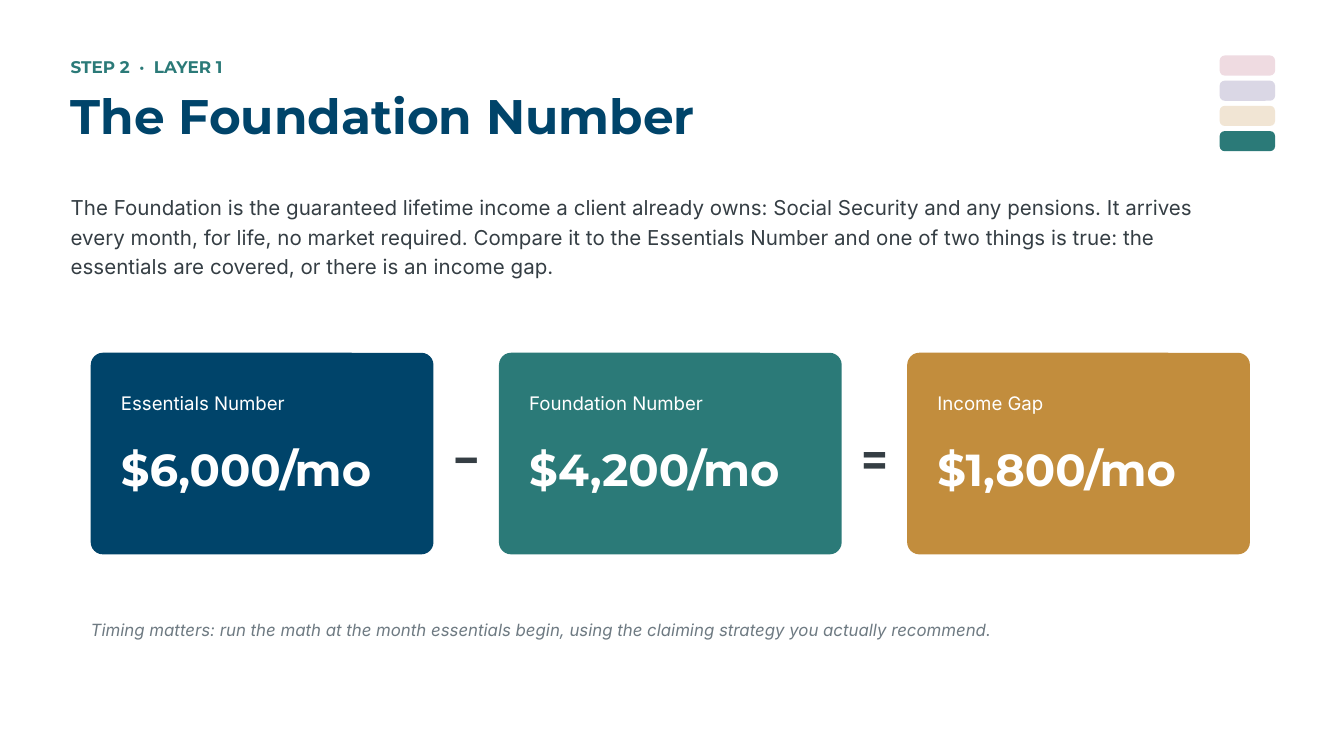
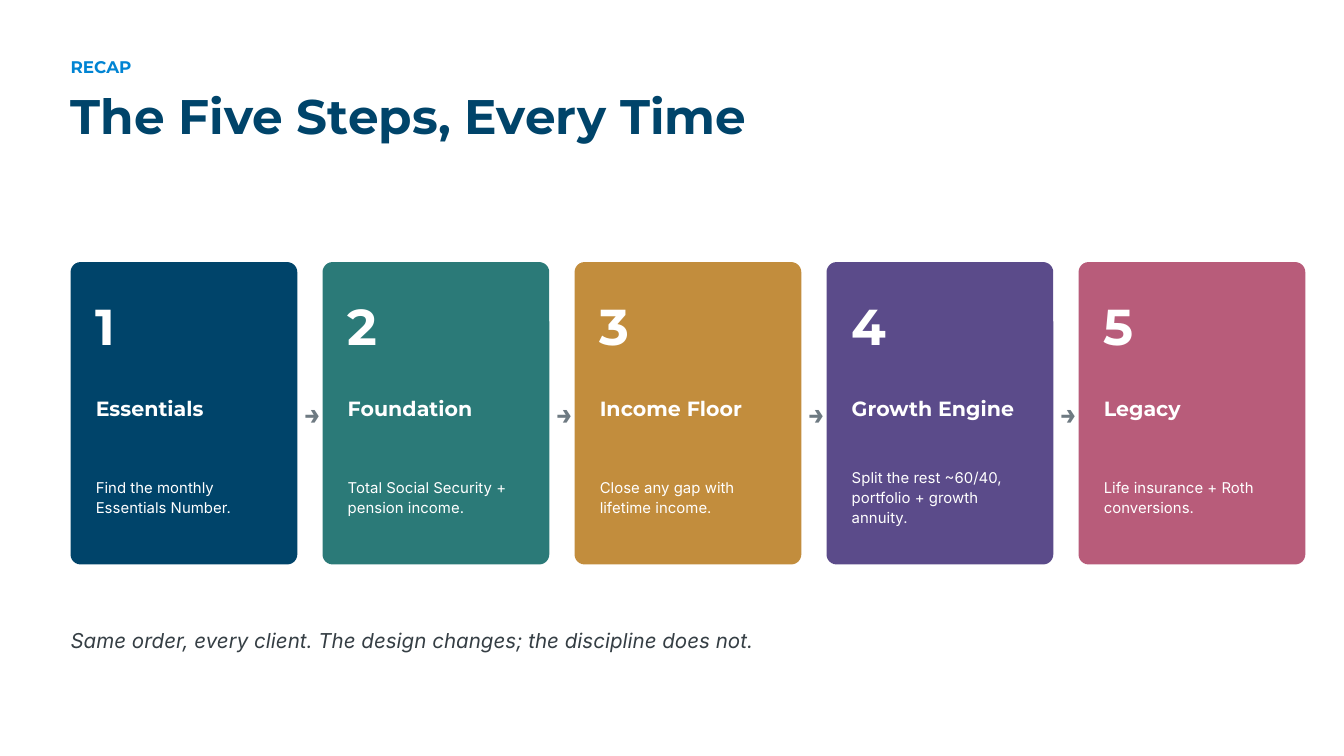
from lxml import etree
from pptx import Presentation
from pptx.dml.color import RGBColor
from pptx.enum.shapes import MSO_SHAPE
from pptx.enum.text import MSO_ANCHOR, PP_ALIGN
from pptx.oxml.ns import qn
from pptx.util import Emu, Inches, Pt

ROUNDED = MSO_SHAPE.ROUNDED_RECTANGLE
MIDDLE = MSO_ANCHOR.MIDDLE
LEFT, CENTER = PP_ALIGN.LEFT, PP_ALIGN.CENTER

PX = 6858  # EMU per px: 750 px make the slide height
HEADING, BODY = "Montserrat", "Inter"
MARGIN = 70

COLORS = {
    "navy": "00446A",
    "teal": "2B7A78",
    "gold": "C28D3D",
    "purple": "5B4B8A",
    "rose": "B85C7A",
    "blue": "0084D3",
    "ink": "353E44",
    "gray": "6E7A82",
    "white": "FFFFFF",
}


class Deck:
    """Holds the shared style and the slide being filled."""

    def __init__(self):
        self.presentation = Presentation()
        self.presentation.slide_width = Inches(10)
        self.presentation.slide_height = Emu(750 * PX)
        self.slide = None

    def color(self, name):
        return RGBColor.from_string(COLORS[name])

    def box(self, left, top, width, height):
        return [Emu(length * PX) for length in (left, top, width, height)]

    def new_slide(self, kicker, title, kicker_color):
        self.slide = self.presentation.slides.add_slide(self.presentation.slide_layouts[6])
        fill = self.slide.background.fill
        fill.solid()
        fill.fore_color.rgb = self.color("white")
        self.text(kicker, MARGIN, 50, 700, 32, 9, kicker_color, HEADING, bold=True)
        self.text(title, MARGIN, 72, 960, 85, 26, "navy", HEADING, bold=True)

    def text(self, words, left, top, width, height, size, color, font=BODY,
             bold=False, italic=False, align=LEFT, spacing=None):
        shape = self.slide.shapes.add_textbox(*self.box(left, top, width, height))
        frame = shape.text_frame
        frame.word_wrap = True
        frame.vertical_anchor = MIDDLE
        frame.margin_left = frame.margin_right = 0
        frame.margin_top = frame.margin_bottom = 0
        paragraph = frame.paragraphs[0]
        paragraph.text = words
        paragraph.alignment = align
        if spacing:
            paragraph.line_spacing = spacing
        paragraph.font.name = font
        paragraph.font.size = Pt(size)
        paragraph.font.bold = bold
        paragraph.font.italic = italic
        paragraph.font.color.rgb = self.color(color)

    def card(self, left, top, width, height, color, radius, opacity=100):
        shape = self.slide.shapes.add_shape(ROUNDED, *self.box(left, top, width, height))
        shape.adjustments[0] = radius / min(width, height)
        shape.shadow.inherit = False
        shape.line.fill.background()
        shape.fill.solid()
        shape.fill.fore_color.rgb = self.color(color)
        if opacity < 100:
            fill_color = next(shape.element.spPr.iter(qn("a:srgbClr")))
            etree.SubElement(fill_color, qn("a:alpha"), val=str(opacity * 1000))

    def layer_stack(self, layers, active):
        """Small stack of layers, bottom first, with one highlighted."""
        for index, color in enumerate(layers):
            self.card(1210, 130 - 25 * index, 55, 20, color, 5,
                      100 if color == active else 22)

    def amount_card(self, left, color, label, amount):
        self.card(left, 350, 340, 200, color, 12)
        self.text(label, left + 30, 380, 290, 40, 10, "white")
        self.text(amount, left + 30, 425, 290, 80, 24, "white", HEADING, bold=True)

    def step_card(self, left, color, number, name, summary):
        self.card(left, 260, 225, 300, color, 10)
        inner = left + 25
        self.text(str(number), inner, 285, 100, 75, 27, "white", HEADING, bold=True)
        self.text(name, inner, 370, 180, 70, 11, "white", HEADING, bold=True)
        self.text(summary, inner, 440, 180, 105, 8, "white", spacing=1.12)


def foundation_slide(deck):
    deck.new_slide("STEP 2  ·  LAYER 1", "The Foundation Number", "teal")
    deck.layer_stack(["teal", "gold", "purple", "rose"], active="teal")
    deck.text(
        "The Foundation is the guaranteed lifetime income a client already owns: "
        "Social Security and any pensions. It arrives every month, for life, no market "
        "required. Compare it to the Essentials Number and one of two things is true: "
        "the essentials are covered, or there is an income gap.",
        MARGIN, 175, 1140, 115, 11, "ink", spacing=1.2)

    # Equation: each amount is followed by its operator
    terms = [
        ("navy", "Essentials Number", "$6,000/mo", "−"),
        ("teal", "Foundation Number", "$4,200/mo", "="),
        ("gold", "Income Gap", "$1,800/mo", None),
    ]
    for index, (color, label, amount, operator) in enumerate(terms):
        left = 90 + 405 * index
        deck.amount_card(left, color, label, amount)
        if operator:
            deck.text(operator, left + 340, 420, 65, 70, 24, "ink", HEADING,
                      bold=True, align=CENTER)

    deck.text(
        "Timing matters: run the math at the month essentials begin, "
        "using the claiming strategy you actually recommend.",
        90, 600, 1140, 50, 9, "gray", italic=True)


def recap_slide(deck):
    deck.new_slide("RECAP", "The Five Steps, Every Time", "blue")

    # Step cards with arrows between them
    steps = [
        ("navy", "Essentials", "Find the monthly Essentials Number."),
        ("teal", "Foundation", "Total Social Security + pension income."),
        ("gold", "Income Floor", "Close any gap with lifetime income."),
        ("purple", "Growth Engine", "Split the rest ~60/40, portfolio + growth annuity."),
        ("rose", "Legacy", "Life insurance + Roth conversions."),
    ]
    for number, (color, name, summary) in enumerate(steps, start=1):
        left = MARGIN + 250 * (number - 1)
        deck.step_card(left, color, number, name, summary)
        if number < len(steps):
            deck.text("→", left + 220, 385, 40, 50, 15, "gray", HEADING,
                      bold=True, align=CENTER)

    deck.text("Same order, every client. The design changes; the discipline does not.",
              MARGIN, 610, 1190, 50, 11, "ink", italic=True)


def main():
    deck = Deck()
    foundation_slide(deck)
    recap_slide(deck)
    deck.presentation.save("out.pptx")


if __name__ == "__main__":
    main()
